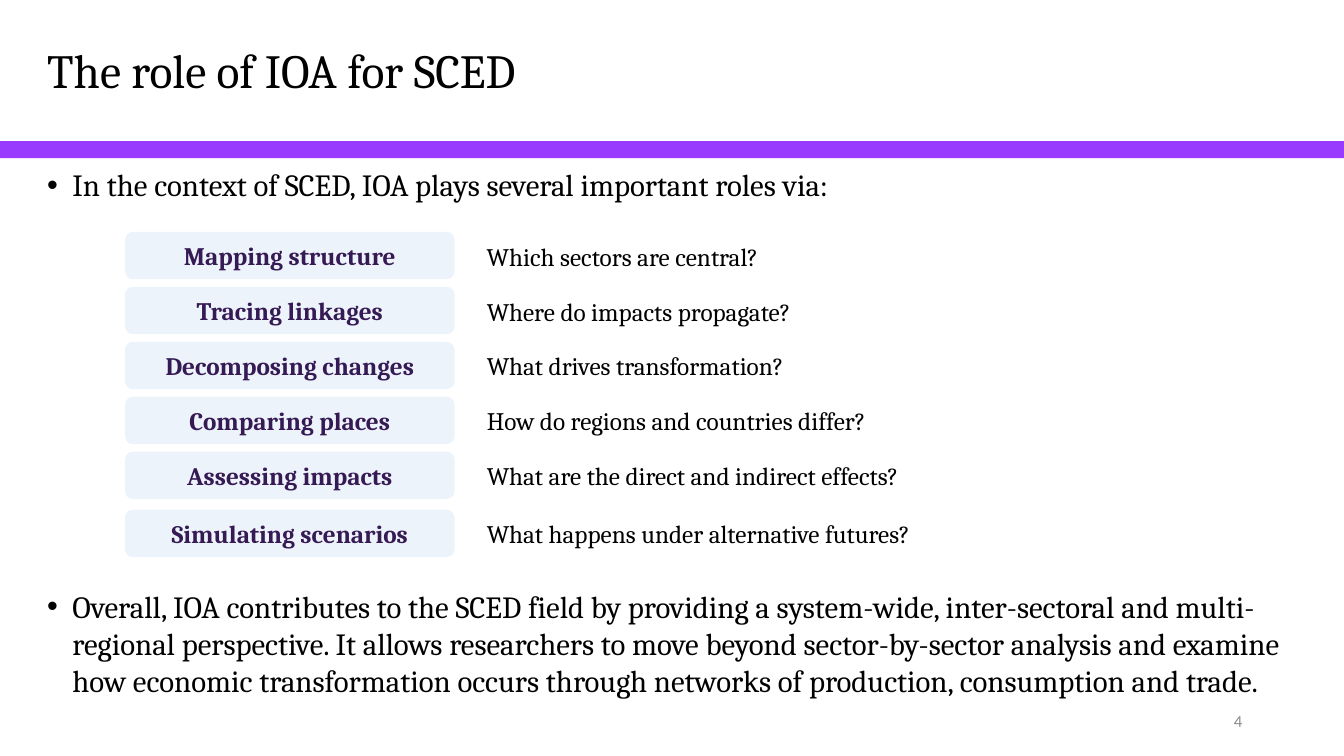
from dataclasses import dataclass

from lxml import etree
from pptx import Presentation
from pptx.dml.color import RGBColor
from pptx.enum.shapes import MSO_SHAPE
from pptx.enum.text import MSO_ANCHOR, PP_ALIGN
from pptx.oxml.ns import qn
from pptx.util import Inches, Pt

RECTANGLE, ROUNDED = MSO_SHAPE.RECTANGLE, MSO_SHAPE.ROUNDED_RECTANGLE
TOP, MIDDLE = MSO_ANCHOR.TOP, MSO_ANCHOR.MIDDLE
LEFT, CENTER, RIGHT = PP_ALIGN.LEFT, PP_ALIGN.CENTER, PP_ALIGN.RIGHT

SLIDE_WIDTH, SLIDE_HEIGHT = Inches(13.33), Inches(7.5)


@dataclass(frozen=True)
class Theme:
    serif: str = "Cambria"
    sans: str = "Calibri"
    ink: str = "000000"
    band: str = "993AFF"
    pill: str = "EDF3FB"
    pill_ink: str = "361A54"
    muted: str = "8C8C8C"
    title_size: int = 34
    body_size: int = 22
    row_size: int = 18
    number_size: int = 12


THEME = Theme()

# Role, question, width of the question box
ROLES = [
    ("Mapping structure", "Which sectors are central?", 27.68),
    ("Tracing linkages", "Where do impacts propagate?", 48.99),
    ("Decomposing changes", "What drives transformation?", 41.64),
    ("Comparing places", "How do regions and countries differ?", 42.91),
    ("Assessing impacts", "What are the direct and indirect effects?", 42.16),
    ("Simulating scenarios", "What happens under alternative futures?", 42.16),
]
INTRO = "In the context of SCED, IOA plays several important roles via:"
SUMMARY = (
    "Overall, IOA contributes to the SCED field by providing a system-wide, "
    "inter-sectoral and multi-regional perspective. It allows researchers to move "
    "beyond sector-by-sector analysis and examine how economic transformation occurs "
    "through networks of production, consumption and trade."
)

# Lengths in percent of the slide's width or height
MARGIN, BODY_WIDTH = 2.78, 96.55
PILL_LEFT, PILL_WIDTH, PILL_HEIGHT = 9.3, 24.53, 6.27
QUESTION_LEFT, QUESTION_DROP, LINE_HEIGHT = 31.73, 0.53, 5.33
FIRST_ROW, ROW_STEP, LAST_ROW_DROP = 30.67, 7.27, 0.4


def place(left, top, width, height):
    return (int(SLIDE_WIDTH * left / 100), int(SLIDE_HEIGHT * top / 100),
            int(SLIDE_WIDTH * width / 100), int(SLIDE_HEIGHT * height / 100))


def write(shape, text, size, color=THEME.ink, font=THEME.serif,
          align=LEFT, anchor=TOP, bold=False):
    frame = shape.text_frame
    frame.text = text
    frame.word_wrap = True
    frame.vertical_anchor = anchor
    para = frame.paragraphs[0]
    para.alignment = align
    for span in para.runs:
        span.font.name = font
        span.font.size = Pt(size)
        span.font.bold = bold
        span.font.color.rgb = RGBColor.from_string(color)
    return para


def add_text(page, area, text, size, **style):
    return write(page.shapes.add_textbox(*place(*area)), text, size, **style)


def add_block(page, kind, area, fill):
    block = page.shapes.add_shape(kind, *place(*area))
    block.shadow.inherit = False
    block.fill.solid()
    block.fill.fore_color.rgb = RGBColor.from_string(fill)
    block.line.fill.background()
    return block


def indent(para, margin, first_line=0):
    properties = para._p.get_or_add_pPr()
    properties.set("marL", str(Inches(margin)))
    properties.set("indent", str(Inches(first_line)))
    return properties


def add_bullet(page, top, height, text):
    para = add_text(page, (MARGIN, top, BODY_WIDTH, height), text, THEME.body_size)
    properties = indent(para, 0.25, -0.25)
    etree.SubElement(properties, qn("a:buFont")).set("typeface", "Arial")
    etree.SubElement(properties, qn("a:buChar")).set("char", "•")


def add_role(page, top, role, question, question_width):
    pill = add_block(page, ROUNDED, (PILL_LEFT, top, PILL_WIDTH, PILL_HEIGHT), THEME.pill)
    write(pill, role, THEME.row_size, color=THEME.pill_ink,
          align=CENTER, anchor=MIDDLE, bold=True)
    area = (QUESTION_LEFT, top + QUESTION_DROP, question_width, LINE_HEIGHT)
    para = add_text(page, area, question, THEME.row_size)
    para.level = 1
    indent(para, 0.5)


def main():
    deck = Presentation()
    deck.slide_width, deck.slide_height = SLIDE_WIDTH, SLIDE_HEIGHT
    page = deck.slides.add_slide(deck.slide_layouts[6])

    # Title and band
    add_block(page, RECTANGLE, (0, 18.67, 100, 2.27), THEME.band)
    title = add_text(page, (MARGIN, 0, 94.6, 19.33), "The role of IOA for SCED",
                     THEME.title_size, anchor=MIDDLE)
    title.line_spacing = 0.9

    # Introduction and roles, the last role set slightly apart
    add_bullet(page, 21.33, 20.53, INTRO)
    for row, (role, question, width) in enumerate(ROLES):
        top = FIRST_ROW + row * ROW_STEP
        if row == len(ROLES) - 1:
            top += LAST_ROW_DROP
        add_role(page, top, role, question, width)

    # Summary and page number
    add_bullet(page, 77.07, 22.93, SUMMARY)
    add_text(page, (70.67, 92.67, 22.5, LINE_HEIGHT), "4", THEME.number_size,
             color=THEME.muted, font=THEME.sans, align=RIGHT, anchor=MIDDLE)

    deck.save("out.pptx")


if __name__ == "__main__":
    main()
